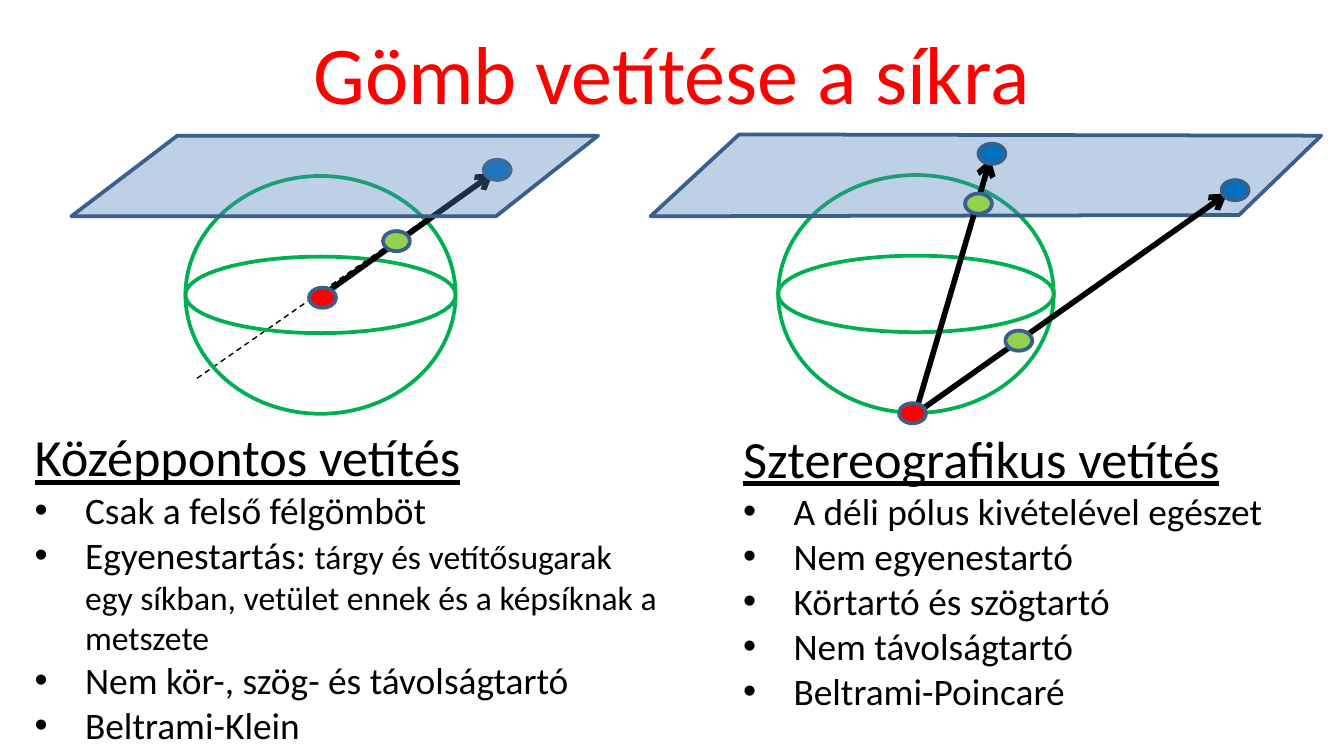
import dataclasses

import lxml.etree
import pptx
import pptx.dml.color
import pptx.enum.dml
import pptx.enum.shapes
import pptx.enum.text
import pptx.oxml.ns
import pptx.util

Pt = pptx.util.Pt


@dataclasses.dataclass(frozen=True)
class Theme:
    font: str = "Calibri"
    title: int = 44
    head: int = 28
    body: int = 20
    small: int = 18
    black: str = "000000"
    red: str = "FF0000"
    green: str = "92D050"
    blue: str = "0070C0"
    ball: str = "00B050"
    plane: str = "4F81BD"
    edge: str = "3A5F8C"


def color(code):
    return pptx.dml.color.RGBColor.from_string(code)


def child(node, tag, **attrs):
    return lxml.etree.SubElement(node, pptx.oxml.ns.qn(tag), attrs)


class Sketch:
    def __init__(self, slide, theme):
        self.slide = slide
        self.theme = theme

    def style(self, run, size, code):
        run.font.name = self.theme.font
        run.font.size = Pt(size)
        run.font.color.rgb = color(code)

    def title(self, text, x, y, w, h):
        shape = self.slide.shapes.title
        shape.left, shape.top, shape.width, shape.height = map(Pt, (x, y, w, h))
        frame = shape.text_frame
        frame.text = text
        frame.vertical_anchor = pptx.enum.text.MSO_ANCHOR.MIDDLE
        para = frame.paragraphs[0]
        para.alignment = pptx.enum.text.PP_ALIGN.CENTER
        self.style(para.runs[0], self.theme.title, self.theme.red)

    def paint(self, shape, fill, edge):
        shape.shadow.inherit = False
        if fill:
            shape.fill.solid()
            shape.fill.fore_color.rgb = color(fill)
        else:
            shape.fill.background()
        shape.line.color.rgb = color(edge)
        shape.line.width = Pt(2)

    def oval(self, mid, w, h, fill=None, edge=None):
        x, y = mid
        kind = pptx.enum.shapes.MSO_SHAPE.OVAL
        shape = self.slide.shapes.add_shape(
            kind, Pt(x - w / 2), Pt(y - h / 2), Pt(w), Pt(h))
        self.paint(shape, fill, edge or self.theme.edge)

    def dot(self, mid, fill):
        self.oval(mid, 14.4, 10.8, fill)

    def ball(self, mid, w):
        # Outline and equator share one centre
        for h in (127.4, 41):
            self.oval(mid, w, h, edge=self.theme.ball)

    def plane(self, points):
        start, *rest = [(Pt(x), Pt(y)) for x, y in points]
        build = self.slide.shapes.build_freeform(*start)
        build.add_line_segments(rest, close=True)
        shape = build.convert_to_shape()
        self.paint(shape, self.theme.plane, self.theme.edge)
        tint = shape.fill._xPr.find(".//" + pptx.oxml.ns.qn("a:srgbClr"))
        child(tint, "a:alpha", val="37000")

    def line(self, start, end, width=3, dash=False):
        kind = pptx.enum.shapes.MSO_CONNECTOR.STRAIGHT
        link = self.slide.shapes.add_connector(kind, *map(Pt, start + end))
        link.line.color.rgb = color(self.theme.black)
        link.line.width = Pt(width)
        if dash:
            link.line.dash_style = pptx.enum.dml.MSO_LINE.DASH
        else:
            child(link.line._get_or_add_ln(), "a:tailEnd", type="arrow")
        child(link._element.spPr, "a:effectLst")

    def notes(self, head, items, x, y, w, h):
        box = self.slide.shapes.add_textbox(*map(Pt, (x, y, w, h)))
        frame = box.text_frame
        frame.word_wrap = True
        frame.auto_size = pptx.enum.text.MSO_AUTO_SIZE.SHAPE_TO_FIT_TEXT
        frame.text = head
        run = frame.paragraphs[0].runs[0]
        self.style(run, self.theme.head, self.theme.black)
        run.font.underline = True
        for text, *extra in items:
            para = frame.add_paragraph()
            para.text = text
            self.style(para.runs[0], self.theme.body, self.theme.black)
            for more in extra:
                run = para.add_run()
                run.text = more
                self.style(run, self.theme.small, self.theme.black)
            props = para._p.get_or_add_pPr()
            props.set("marL", str(Pt(27)))
            props.set("indent", str(Pt(-27)))
            child(props, "a:buFont", typeface="Arial")
            child(props, "a:buChar", char="•")


def main():
    deck = pptx.Presentation()
    deck.slide_width, deck.slide_height = Pt(720), Pt(405)
    theme = Theme()
    art = Sketch(deck.slides.add_slide(deck.slide_layouts[5]), theme)
    art.title("Gömb vetítése a síkra", 36, 4.3, 648, 67.7)

    # Central projection: the plane covers the ray and its image
    art.line((247.7, 103.7), (105.1, 203), 0.75, dash=True)
    art.ball((171.7, 158), 144.7)
    art.line((173.5, 157.7), (264.2, 92.9))
    art.dot((172.8, 159.5), theme.red)
    art.dot((212.4, 129.2), theme.green)
    art.dot((266.4, 91), theme.blue)
    art.plane([(95, 72.7), (38.2, 115.9), (265.7, 115.9), (320.4, 72.7)])

    # Stereographic projection: rays from the south pole, above the plane
    art.ball((490.7, 157.5), 147.6)
    art.plane([(396, 72), (348.5, 115.9), (663.8, 115.2), (707.8, 72.7)])
    pole = (490.3, 221.8)
    rays = [
        ((530.6, 85), (524.2, 109.1), (531.4, 82.4)),
        ((657.4, 103.7), (545.8, 182.5), (661.7, 101.9)),
    ]
    for tip, point, image in rays:
        art.line(pole, tip)
        art.dot(point, theme.green)
        art.dot(image, theme.blue)
    art.dot((488.9, 221.4), theme.red)

    # Properties of each projection
    art.notes("Középpontos vetítés", [
        ("Csak a felső félgömböt",),
        ("Egyenestartás: ", "tárgy és vetítősugarak egy síkban, "
         "vetület ennek és a képsíknak a metszete"),
        ("Nem kör-, szög- és távolságtartó",),
        ("Beltrami-Klein",),
    ], 11.5, 223.9, 348.5, 181.4)
    art.notes("Sztereografikus vetítés", [
        ("A déli pólus kivételével egészet",),
        ("Nem egyenestartó",),
        ("Körtartó és szögtartó",),
        ("Nem távolságtartó",),
        ("Beltrami-Poincaré",),
    ], 391, 224.6, 330.5, 162.7)

    deck.save("out.pptx")


if __name__ == "__main__":
    main()
